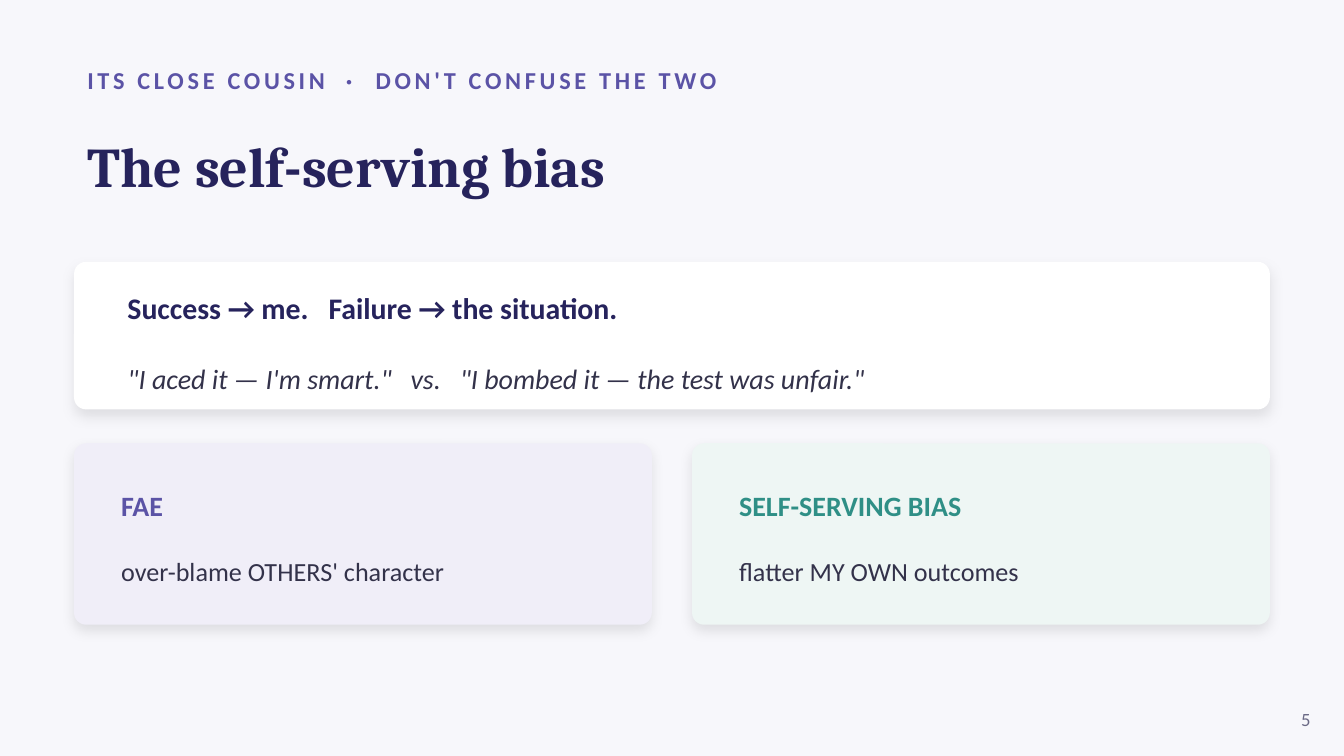
from lxml import etree
from pptx import Presentation
from pptx.dml.color import RGBColor
from pptx.enum.shapes import MSO_SHAPE
from pptx.enum.text import MSO_ANCHOR, MSO_AUTO_SIZE, PP_ALIGN
from pptx.oxml import parse_xml
from pptx.oxml.ns import nsdecls, qn
from pptx.util import Cm, Pt

ROUNDED = MSO_SHAPE.ROUNDED_RECTANGLE
MIDDLE = MSO_ANCHOR.MIDDLE
NO_FIT = MSO_AUTO_SIZE.NONE
LEFT, RIGHT = PP_ALIGN.LEFT, PP_ALIGN.RIGHT

EYEBROW = "ITS CLOSE COUSIN\t·\tDON'T CONFUSE THE TWO"
TITLE = "The self-serving bias"
RULE = "Success → me.\tFailure → the situation."
EXAMPLE = "\"I aced it — I'm smart.\"\tvs.\t\"I bombed it — the test was unfair.\""
COMPARISON = [
    ("FAE", "over-blame OTHERS' character", "violet", "lilac"),
    ("SELF-SERVING BIAS", "flatter MY OWN outcomes", "teal", "mint"),
]
PAGE_NUMBER = "5"

THEME = {
    "colors": {
        "page": "F7F7FB", "white": "FFFFFF", "lilac": "F0EEF8", "mint": "EEF6F4",
        "navy": "26235C", "violet": "5B53A6", "teal": "2F8F86",
        "ink": "33324A", "muted": "6B6A86",
    },
    "styles": {
        "eyebrow": dict(size=13, bold=True, spacing=200),
        "title": dict(size=30, bold=True, font="Cambria"),
        "rule": dict(size=16, bold=True),
        "example": dict(size=15, italic=True),
        "heading": dict(size=15, bold=True),
        "body": dict(size=14),
        "number": dict(size=10),
    },
    "font": "Calibri",
    "radius": 0.23,
}

MARGIN, CONTENT_WIDTH, GUTTER = 1.4, 22.6, 0.76
RULE_TOP, RULE_HEIGHT = 4.95, 2.79
COLUMN_TOP, COLUMN_HEIGHT = 8.38, 3.43


def color(name):
    return RGBColor.from_string(THEME["colors"][name])


def add_card(page, left, top, width, height, fill):
    card = page.shapes.add_shape(ROUNDED, Cm(left), Cm(top), Cm(width), Cm(height))
    card.adjustments[0] = THEME["radius"] / height
    card.fill.solid()
    card.fill.fore_color.rgb = color(fill)
    card.line.fill.background()
    card._element.spPr.append(parse_xml(
        f'<a:effectLst {nsdecls("a")}><a:outerShdw blurRad="{Pt(7)}" dist="{Pt(3)}" '
        'dir="5400000" algn="bl" rotWithShape="0"><a:srgbClr val="000000">'
        '<a:alpha val="10000"/></a:srgbClr></a:outerShdw></a:effectLst>'))


def write(box, lines, align=LEFT):
    frame = box.text_frame
    frame.word_wrap = True
    frame.auto_size = NO_FIT
    frame.vertical_anchor = MIDDLE
    for index, (text, style_name, tint, tabs, before) in enumerate(lines):
        style = THEME["styles"][style_name]
        para = frame.add_paragraph() if index else frame.paragraphs[0]
        if tabs:
            stops = etree.SubElement(para._p.get_or_add_pPr(), qn("a:tabLst"))
            for stop in tabs:
                etree.SubElement(stops, qn("a:tab"), pos=str(Cm(stop)), algn="l")
        para.alignment = align
        para.space_before = Pt(before)
        span = para.add_run()
        span.text = text
        span.font.name = style.get("font", THEME["font"])
        span.font.size = Pt(style["size"])
        span.font.bold = style.get("bold", False)
        span.font.italic = style.get("italic", False)
        span.font.color.rgb = color(tint)
        if "spacing" in style:
            span._r.get_or_add_rPr().set("spc", str(style["spacing"]))


def add_text(page, left, top, width, height, lines, align=LEFT):
    box = page.shapes.add_textbox(Cm(left), Cm(top), Cm(width), Cm(height))
    write(box, lines, align)


def main():
    deck = Presentation()
    deck.slide_width, deck.slide_height = Cm(25.4), Cm(14.29)
    page = deck.slides.add_slide(deck.slide_layouts[5])
    page.background.fill.solid()
    page.background.fill.fore_color.rgb = color("page")

    add_text(page, MARGIN, 1.07, 22.86, 0.89,
             [(EYEBROW, "eyebrow", "violet", (4.89, 5.45), 0)])

    title = page.shapes.title
    title.left, title.top = Cm(MARGIN), Cm(1.98)
    title.width, title.height = Cm(CONTENT_WIDTH), Cm(2.29)
    write(title, [(TITLE, "title", "navy", (), 0)])

    add_card(page, MARGIN, RULE_TOP, CONTENT_WIDTH, RULE_HEIGHT, "white")
    add_text(page, MARGIN + 0.76, RULE_TOP + 0.51, CONTENT_WIDTH - 1.52, 2.03,
             [(RULE, "rule", "navy", (3.8,), 0),
              (EXAMPLE, "example", "ink", (5.35, 6.28), 19.5)])

    column_width = (CONTENT_WIDTH - GUTTER) / len(COMPARISON)
    for index, (heading, body, tint, fill) in enumerate(COMPARISON):
        left = MARGIN + index * (column_width + GUTTER)
        add_card(page, left, COLUMN_TOP, column_width, COLUMN_HEIGHT, fill)
        add_text(page, left + 0.64, COLUMN_TOP + 0.64, column_width - 1.28, 2.29,
                 [(heading, "heading", tint, (), 0),
                  (body, "body", "ink", (), 18)])

    add_text(page, 23.75, 13.21, 1.27, 0.76,
             [(PAGE_NUMBER, "number", "muted", (), 0)], RIGHT)
    deck.save("out.pptx")


if __name__ == "__main__":
    main()
